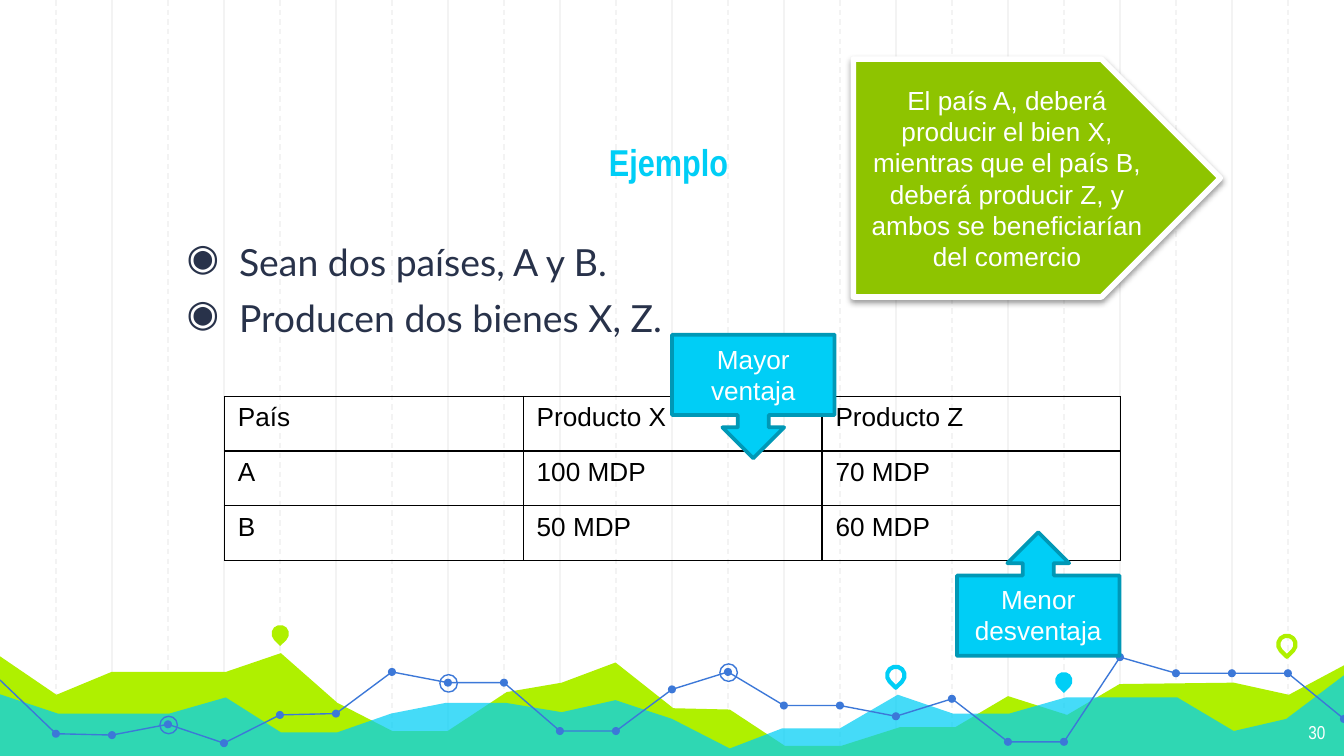
from dataclasses import dataclass
from typing import NamedTuple, Optional

from lxml import etree
from pptx import Presentation
from pptx import util as u
from pptx.dml.color import RGBColor
from pptx.enum import dml, shapes, text
from pptx.oxml.ns import qn

LIME = RGBColor(0xAF, 0xF0, 0x00)
GREEN = RGBColor(0x8E, 0xC4, 0x00)
CYAN = RGBColor(0x00, 0xCE, 0xF6)
TEAL = RGBColor(0x00, 0x98, 0xB6)
BLUE = RGBColor(0x3C, 0x78, 0xD8)
NAVY = RGBColor(0x28, 0x32, 0x4A)
PALE = RGBColor(0xF3, 0xF3, 0xF3)
BLACK = RGBColor(0x00, 0x00, 0x00)
WHITE = RGBColor(0xFF, 0xFF, 0xFF)

KIND = shapes.MSO_SHAPE
ALIGN = text.PP_ALIGN
STEP = 10 / 24


class Box(NamedTuple):
    left: float
    top: float
    width: float
    height: float


class Pin(NamedTuple):
    left: float
    top: float
    color: RGBColor
    hollow: bool


@dataclass
class Style:
    size: int = 14
    font: str = "Arial"
    color: RGBColor = WHITE
    bold: bool = False
    align: Optional[ALIGN] = ALIGN.CENTER


GRAPH = [5.06, 5.46, 5.47, 5.39, 5.53, 5.32, 5.31, 5, 5.08, 5.08, 5.44, 5.44, 5.13,
         5, 5.25, 5.25, 5.33, 5.2, 5.52, 5.52, 4.89, 5.01, 5.01, 5.01, 5.35]
GRAPH_PARTS = [(0, 11), (11, 20), (20, 24)]
RINGED = [3, 8, 13]
PINS = [Pin(2.02, 4.65, LIME, False), Pin(6.6, 4.96, CYAN, True),
        Pin(7.85, 5, CYAN, False), Pin(9.51, 4.73, LIME, True)]
LIME_HILLS = [
    (-0.02, 4.87), (0.42, 5.17), (0.83, 5), (1.68, 5), (2.09, 4.86), (2.51, 5.23),
    (2.92, 5.44), (3.33, 5.44), (3.77, 5.15), (4.18, 5.08), (4.58, 4.93), (5.01, 5.27),
    (5.43, 5.28), (5.84, 5.55), (6.26, 5.55), (6.7, 5.41), (7.11, 5.41), (7.5, 5.18),
    (7.94, 5.32), (8.33, 5.09), (9.18, 5.08), (9.59, 5.17), (10.02, 4.94),
    (10.01, 5.64), (-0.03, 5.64)]
CYAN_HILLS = [
    (-0.02, 5.16), (0.43, 5.31), (1.26, 5.31), (1.68, 5.19), (2.09, 5.45), (2.51, 5.45),
    (2.91, 5.31), (3.32, 5.23), (3.76, 5.23), (4.18, 5.3), (4.58, 5.21), (5, 5.35),
    (5.43, 5.57), (5.82, 5.42), (6.25, 5.42), (6.68, 5.17), (7.09, 5.31), (7.51, 5.31),
    (7.93, 5.19), (8.76, 5.19), (9.18, 5.44), (9.57, 5.35), (10.02, 5.01),
    (10.02, 5.65), (-0.03, 5.65)]
OUTPUT = [["País", "Producto X", "Producto Z"],
          ["A", "100 MDP", "70 MDP"],
          ["B", "50 MDP", "60 MDP"]]


def inch(value: float) -> u.Length:
    return u.Cm(value * 2.54)


def paint(shape, fill: Optional[RGBColor] = None, line: Optional[RGBColor] = None,
          weight: float = 0.75) -> None:
    shape.shadow.inherit = False
    if fill is None:
        shape.fill.background()
    else:
        shape.fill.solid()
        shape.fill.fore_color.rgb = fill
    if line is None:
        shape.line.fill.background()
    else:
        shape.line.color.rgb = line
        shape.line.width = u.Pt(weight)


def add_preset(slide, kind: KIND, box: Box, **colors):
    shape = slide.shapes.add_shape(kind, *map(inch, box))
    paint(shape, **colors)
    return shape


def add_outline(slide, points: list, close: bool, **colors):
    corners = [(inch(x), inch(y)) for x, y in points]
    builder = slide.shapes.build_freeform(*corners[0])
    builder.add_line_segments(corners[1:], close=close)
    shape = builder.convert_to_shape()
    paint(shape, **colors)
    return shape


def add_guide(slide, column: int, dashed: bool) -> None:
    x = inch(column * STEP)
    guide = slide.shapes.add_connector(shapes.MSO_CONNECTOR.STRAIGHT, x, 0, x, inch(5.65))
    guide.line.color.rgb = PALE
    guide.line.width = u.Pt(0.75)
    if dashed:
        guide.line.dash_style = dml.MSO_LINE.DASH
    etree.SubElement(guide._element.spPr, qn("a:effectLst"))


def write(frame, lines: list, style: Style) -> list:
    frame.word_wrap = True
    for index, words in enumerate(lines):
        paragraph = frame.paragraphs[0] if index == 0 else frame.add_paragraph()
        paragraph.alignment = style.align
        run = paragraph.add_run()
        run.text = words
        run.font.size = u.Pt(style.size)
        run.font.name = style.font
        run.font.bold = style.bold
        run.font.color.rgb = style.color
    return list(frame.paragraphs)


def add_text(slide, box: Box, lines: list, style: Style, inset: float = 0.1,
             anchor=text.MSO_ANCHOR.TOP) -> list:
    frame = slide.shapes.add_textbox(*map(inch, box)).text_frame
    frame.margin_top = frame.margin_bottom = inch(inset)
    frame.vertical_anchor = anchor
    return write(frame, lines, style)


def add_bullet(paragraph) -> None:
    paragraph.space_before = u.Pt(6)
    props = paragraph._p.get_or_add_pPr()
    props.set("marL", str(inch(0.5)))
    props.set("indent", str(inch(-0.39)))
    tint = etree.SubElement(props, qn("a:buClr"))
    etree.SubElement(tint, qn("a:srgbClr"), val=str(NAVY))
    etree.SubElement(props, qn("a:buChar"), char="◉")


def add_borders(cell) -> None:
    props = cell._tc.get_or_add_tcPr()
    for side in ("a:lnL", "a:lnR", "a:lnT", "a:lnB"):
        border = etree.SubElement(props, qn(side), w=str(u.Pt(0.75)))
        solid = etree.SubElement(border, qn("a:solidFill"))
        etree.SubElement(solid, qn("a:srgbClr"), val=str(BLACK))


def add_output_table(slide) -> None:
    table = slide.shapes.add_table(3, 3, *map(inch, Box(1.67, 2.95, 6.67, 1.22))).table
    table.first_row = table.horz_banding = False
    for row, values in enumerate(OUTPUT):
        for column, value in enumerate(values):
            cell = table.cell(row, column)
            add_borders(cell)
            cell.fill.background()
            write(cell.text_frame, [value], Style(color=BLACK, align=None))


def add_landscape(slide) -> None:
    for first in (2, 1):
        for column in range(first, 24, 2):
            add_guide(slide, column, dashed=first == 1)
    add_outline(slide, LIME_HILLS, True, fill=LIME)
    water = add_outline(slide, CYAN_HILLS, True, fill=CYAN)
    tint = water._element.spPr.find(".//" + qn("a:srgbClr"))
    etree.SubElement(tint, qn("a:alpha"), val="73000")
    nodes = [(column * STEP, y) for column, y in enumerate(GRAPH)]
    for first, last in GRAPH_PARTS:
        add_outline(slide, nodes[first:last + 1], False, line=BLUE)
    for x, y in nodes[1:]:
        add_preset(slide, KIND.OVAL, Box(x - 0.03, y - 0.03, 0.06, 0.06), fill=BLUE)
    for column in RINGED:
        x, y = nodes[column]
        add_preset(slide, KIND.OVAL, Box(x - 0.06, y - 0.06, 0.13, 0.13), line=BLUE)
    for pin in PINS:
        colors = {"line": pin.color, "weight": 2.25} if pin.hollow else {"fill": pin.color}
        drop = add_preset(slide, KIND.TEAR, Box(pin.left, pin.top, 0.13, 0.13), **colors)
        drop.rotation = 135


def add_conclusion(slide) -> None:
    plate = add_preset(slide, KIND.PENTAGON, Box(6.35, 0.44, 2.73, 1.77),
                       fill=GREEN, line=WHITE, weight=3)
    effects = plate._element.spPr.find(qn("a:effectLst"))
    shade = etree.SubElement(effects, qn("a:outerShdw"), blurRad=str(u.Pt(3.1)),
                             dist=str(u.Pt(1.6)), dir="5400000", rotWithShape="0")
    tint = etree.SubElement(shade, qn("a:srgbClr"), val=str(BLACK))
    etree.SubElement(tint, qn("a:alpha"), val="38000")
    write(plate.text_frame, ["El país A, deberá producir el bien X, mientras que el país B, "
                             "deberá producir Z, y ambos se beneficiarían del comercio"], Style())


def main() -> None:
    deck = Presentation()
    deck.slide_width, deck.slide_height = inch(10), inch(5.625)
    slide = deck.slides.add_slide(deck.slide_layouts[6])
    add_landscape(slide)
    add_text(slide, Box(1.15, 0.69, 7.65, 0.78), ["Ejemplo"],
             Style(20, "Arial Narrow", CYAN, True), anchor=text.MSO_ANCHOR.BOTTOM)
    for premise in add_text(slide, Box(1.18, 1.68, 7.65, 2.1),
                            ["Sean dos países, A y B.", "Producen dos bienes X, Z."],
                            Style(20, "Lato", NAVY, align=None)):
        add_bullet(premise)
    add_text(slide, Box(9.36, 5.28, 0.6, 0.35), ["30"],
             Style(10, "Arial Narrow", align=ALIGN.RIGHT))
    add_output_table(slide)
    advantage, disadvantage = [
        add_preset(slide, KIND.DOWN_ARROW_CALLOUT, Box(left, top, 1.21, 0.92),
                   fill=CYAN, line=TEAL, weight=2)
        for left, top in ((5, 2.49), (7.12, 3.96))]
    write(advantage.text_frame, ["Mayor ventaja"], Style())
    disadvantage.rotation = 180
    add_text(slide, Box(6.8, 4.29, 1.85, 0.57), ["Menor", "desventaja"], Style(), inset=0.05)
    add_conclusion(slide)
    deck.save("out.pptx")


if __name__ == "__main__":
    main()
